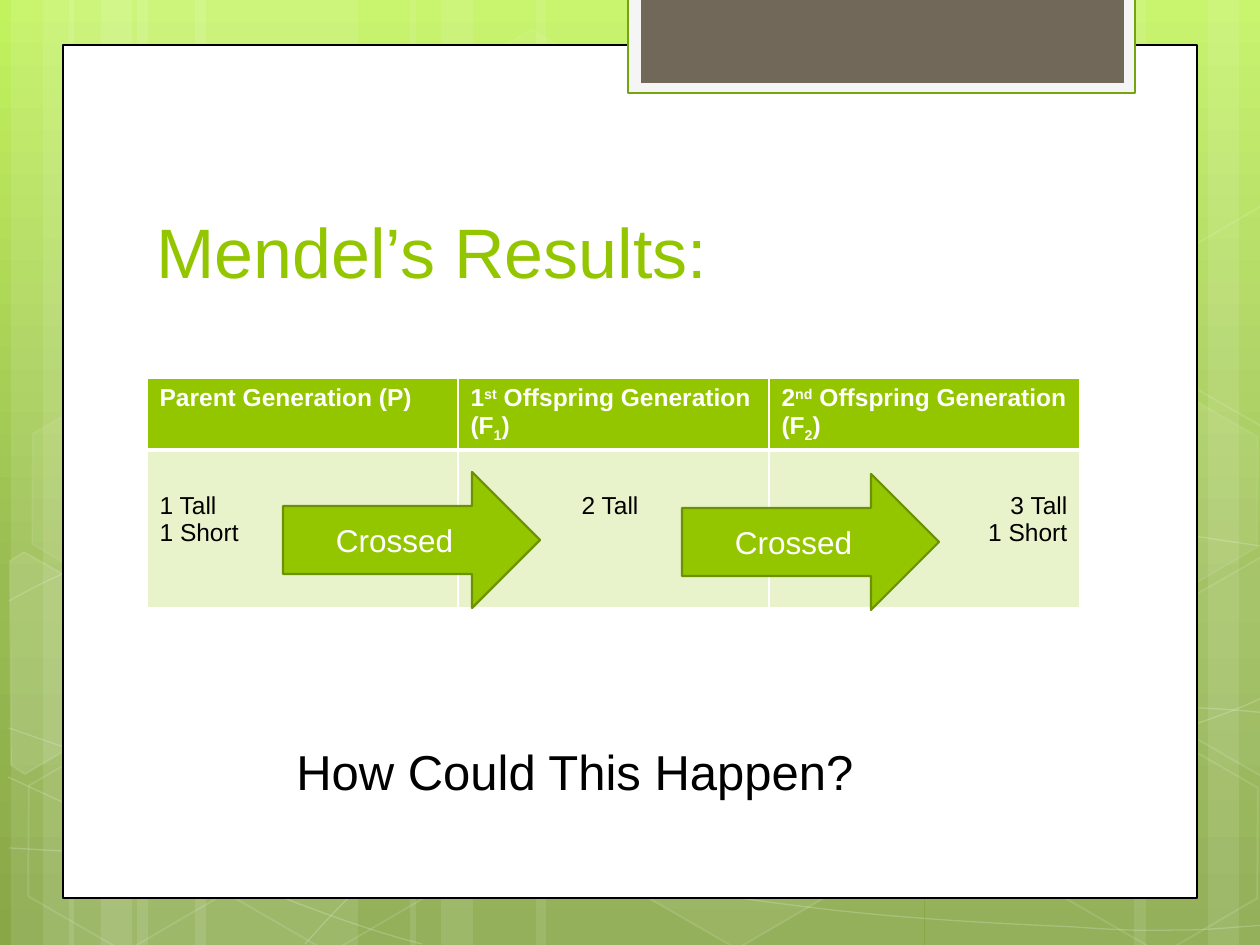
import copy
import pptx
import pptx.dml.color
import pptx.enum.shapes
import pptx.enum.text
import pptx.oxml
import pptx.oxml.ns
import pptx.util

PX = 914400 / 126
SHAPE = pptx.enum.shapes.MSO_SHAPE
ALIGN = pptx.enum.text.PP_ALIGN
ANCHOR = pptx.enum.text.MSO_ANCHOR
qn = pptx.oxml.ns.qn

THEME = {
    "font": "Arial", "white": "FFFFFF", "black": "000000", "accent": "94C600",
    "accent_dark": "6C9101", "row": "E9F3CB", "tab": "71685A",
    "tab_frame": "F5F5F5", "tab_line": "74A50F",
    "title": 40, "question": 28, "arrow": 18, "cell": 14,
    "sky": [(0, "C2F35E"), (0.62, "99BC52"), (1, "88A848")],
}

TITLE = "Mendel’s Results:"
QUESTION = "How Could This Happen?"
HEADERS = [
    ["Parent Generation (P)"],
    ["1", ("st", 30), " Offspring Generation (F", ("1", -25), ")"],
    ["2", ("nd", 30), " Offspring Generation (F", ("2", -25), ")"],
]
RESULTS = [
    (["1 Tall", "1 Short"], ALIGN.LEFT),
    (["2 Tall "], ALIGN.CENTER),
    (["3 Tall", "1 Short"], ALIGN.RIGHT),
]
ARROWS = [("Crossed", 283, 472), ("Crossed", 682, 474)]

BANDS = [(137, 221), (11, 63), (43, 105), (195, 221), (69, 63), (101, 105),
         (925, 221), (1208, 63), (1134, 105), (536, 388), (410, 63), (441, 105)]
CURVES = [
    [(9, 848), (77, 852), (145, 856), (239, 854), (334, 853), (451, 851), (577, 838),
     (703, 825), (882, 801), (998, 777), (1113, 753), (1231, 716), (1269, 694)],
    [(9, 601), (45, 581), (82, 562), (154, 543), (224, 524), (326, 496), (438, 488),
     (549, 479), (685, 478), (824, 488), (963, 498), (1193, 537), (1269, 547)],
    [(8, 777), (160, 847), (311, 916), (422, 944)],
    [(9, 728), (49, 742), (88, 756), (161, 776), (234, 795), (344, 827), (450, 848),
     (554, 869), (687, 892), (791, 905), (896, 919), (1008, 924), (1075, 927),
     (1142, 932), (1158, 930), (1191, 930), (1223, 929), (1246, 926), (1269, 925)],
    [(305, 944), (328, 919), (350, 893), (381, 871), (411, 847), (454, 823), (489, 805),
     (524, 788), (546, 780), (592, 767), (638, 754), (722, 737), (767, 728),
     (811, 719), (818, 719), (857, 717), (896, 713), (958, 709), (1000, 708),
     (1045, 707), (1116, 708), (1116, 708), (1144, 708), (1173, 708), (1201, 708),
     (1223, 709), (1245, 711), (1256, 712), (1268, 713), (1264, 712), (1268, 713)],
]
HEXAGONS = [(421, 45, 4, 8), (626, 742, 6, 12), (14, 745, None, 12), (18, 393, 7, 8),
            (219, 746, None, 12), (949, 571, 10, 12), (1051, 747, None, 12),
            (1051, 396, 7, 8)]
CUT_HEXAGONS = [
    ([(10, 561), (24, 552), (121, 607), (120, 718), (25, 774), (11, 765)], 10),
    ([(1167, 611), (1263, 556), (1271, 562), (1271, 772), (1263, 777), (1167, 722)], 4),
    ([(1167, 261), (1263, 205), (1273, 212), (1271, 422), (1263, 427), (1167, 372)], None),
]


def px(*values):
    return [pptx.util.Emu(round(v * PX)) for v in values]


def rgb(name):
    return pptx.dml.color.RGBColor.from_string(THEME.get(name, name))


def paint(fill, color, alpha=None):
    if color is None:
        fill.background()
        return
    fill.solid()
    fill.fore_color.rgb = rgb(color)
    if alpha is not None:
        clr = fill._xPr.find(".//" + qn("a:srgbClr"))
        clr.append(clr.makeelement(qn("a:alpha"), {"val": str(alpha * 1000)}))


def style(sp, fill=None, line=None, width=1, fill_alpha=None, line_alpha=None):
    sp.shadow.inherit = False
    paint(sp.fill, fill, fill_alpha)
    paint(sp.line.fill, line, line_alpha)
    if line:
        sp.line.width = pptx.util.Pt(width)
    return sp


def add_shape(slide, kind, box, **look):
    return style(slide.shapes.add_shape(kind, *px(*box)), **look)


def add_outline(slide, points, close, **look):
    start, *rest = [tuple(px(*point)) for point in points]
    builder = slide.shapes.build_freeform(*start, scale=1.0)
    builder.add_line_segments(rest, close=close)
    return style(builder.convert_to_shape(), **look)


def bend(sp):
    outline = sp._element.find(".//" + qn("a:path"))
    lines = outline.findall(qn("a:lnTo"))
    for i in range(0, len(lines), 3):
        curve = outline.makeelement(qn("a:cubicBezTo"), {})
        outline.append(curve)
        for line in lines[i:i + 3]:
            curve.append(line[0])
            outline.remove(line)


def write(tf, paragraphs, size, color, bold=False, align=ALIGN.LEFT):
    tf.word_wrap = True
    for i, runs in enumerate(paragraphs):
        p = tf.add_paragraph() if i else tf.paragraphs[0]
        p.alignment = align
        for run in [runs] if isinstance(runs, str) else runs:
            text, base = (run, 0) if isinstance(run, str) else run
            r = p.add_run()
            r.text = text
            r.font.name = THEME["font"]
            r.font.size = pptx.util.Pt(THEME[size])
            r.font.bold = bold
            r.font.color.rgb = rgb(color)
            if base:
                r.font._element.set("baseline", str(base * 1000))


def add_text(slide, box, text, size, color, anchor=ANCHOR.TOP):
    tf = slide.shapes.add_textbox(*px(*box)).text_frame
    tf.vertical_anchor = anchor
    write(tf, [text], size, color)


def set_borders(cell, **widths):
    tcPr = cell._tc.get_or_add_tcPr()
    for i, side in enumerate("LRTB"):
        tcPr.insert(i, pptx.oxml.parse_xml(
            f'<a:ln{side} {pptx.oxml.ns.nsdecls("a")} w="{widths.get(side, 1) * 12700}">'
            f'<a:solidFill><a:srgbClr val="{THEME["white"]}"/></a:solidFill></a:ln{side}>'))


def add_background(slide):
    fill = slide.background.fill
    fill.gradient()
    fill.gradient_angle = 270
    stops = slide.element.find(".//" + qn("a:gsLst"))
    stops.append(copy.deepcopy(stops[-1]))
    for stop, (position, color) in zip(fill.gradient_stops, THEME["sky"]):
        stop.position = position
        stop.color.rgb = rgb(color)
    for x, w in BANDS:
        add_shape(slide, SHAPE.RECTANGLE, (x, 0, w, 945), fill="white", fill_alpha=10)
    for curve in CURVES:
        bend(add_outline(slide, curve, False, line="white", width=0.75, line_alpha=20))
    for x, y, fill_alpha, line_alpha in HEXAGONS:
        sp = add_shape(slide, SHAPE.HEXAGON, (x, y, 221, 192), fill=fill_alpha and "white",
                       fill_alpha=fill_alpha, line="white", line_alpha=line_alpha)
        sp.adjustments[0], sp.adjustments[1] = 0.285, 1.155
        sp.rotation = 30
    for points, alpha in CUT_HEXAGONS:
        add_outline(slide, points, True, fill=alpha and "white", fill_alpha=alpha,
                    line="white", line_alpha=12)


def add_results(slide):
    table = slide.shapes.add_table(2, 3, *px(147, 378, 933, 229)).table
    for row, height in zip(table.rows, px(71, 158)):
        row.height = height
    for i, (header, (lines, align)) in enumerate(zip(HEADERS, RESULTS)):
        table.columns[i].width = px(311)[0]
        head, body = table.cell(0, i), table.cell(1, i)
        paint(head.fill, "accent")
        paint(body.fill, "row")
        set_borders(head, B=3)
        set_borders(body, T=3)
        head.margin_bottom = px(3)[0]
        body.margin_top = px(42)[0]
        write(head.text_frame, [header], "cell", "white", bold=True)
        write(body.text_frame, lines, "cell", "black", align=align)
    table.rows[0].height = px(67)[0]
    for text, x, y in ARROWS:
        sp = add_shape(slide, SHAPE.RIGHT_ARROW, (x, y, 257, 136), fill="accent",
                       line="accent_dark", width=1.25)
        sp.text_frame.vertical_anchor = ANCHOR.MIDDLE
        write(sp.text_frame, [text], "arrow", "white", align=ALIGN.CENTER)


def main():
    prs = pptx.Presentation()
    prs.slide_width, prs.slide_height = px(1260, 945)
    slide = prs.slides.add_slide(prs.slide_layouts[6])
    add_background(slide)
    add_shape(slide, SHAPE.RECTANGLE, (63, 45, 1134, 853), fill="white", line="black", width=0.75)
    add_shape(slide, SHAPE.RECTANGLE, (628, -3, 507, 96), fill="tab_frame", line="tab_line",
              width=0.75)
    add_shape(slide, SHAPE.RECTANGLE, (641, -3, 483, 86), fill="tab")
    add_text(slide, (144, 141, 968, 158), TITLE, "title", "accent", anchor=ANCHOR.BOTTOM)
    add_results(slide)
    add_text(slide, (284, 735, 756, 72), QUESTION, "question", "black")
    prs.save("out.pptx")


if __name__ == "__main__":
    main()
